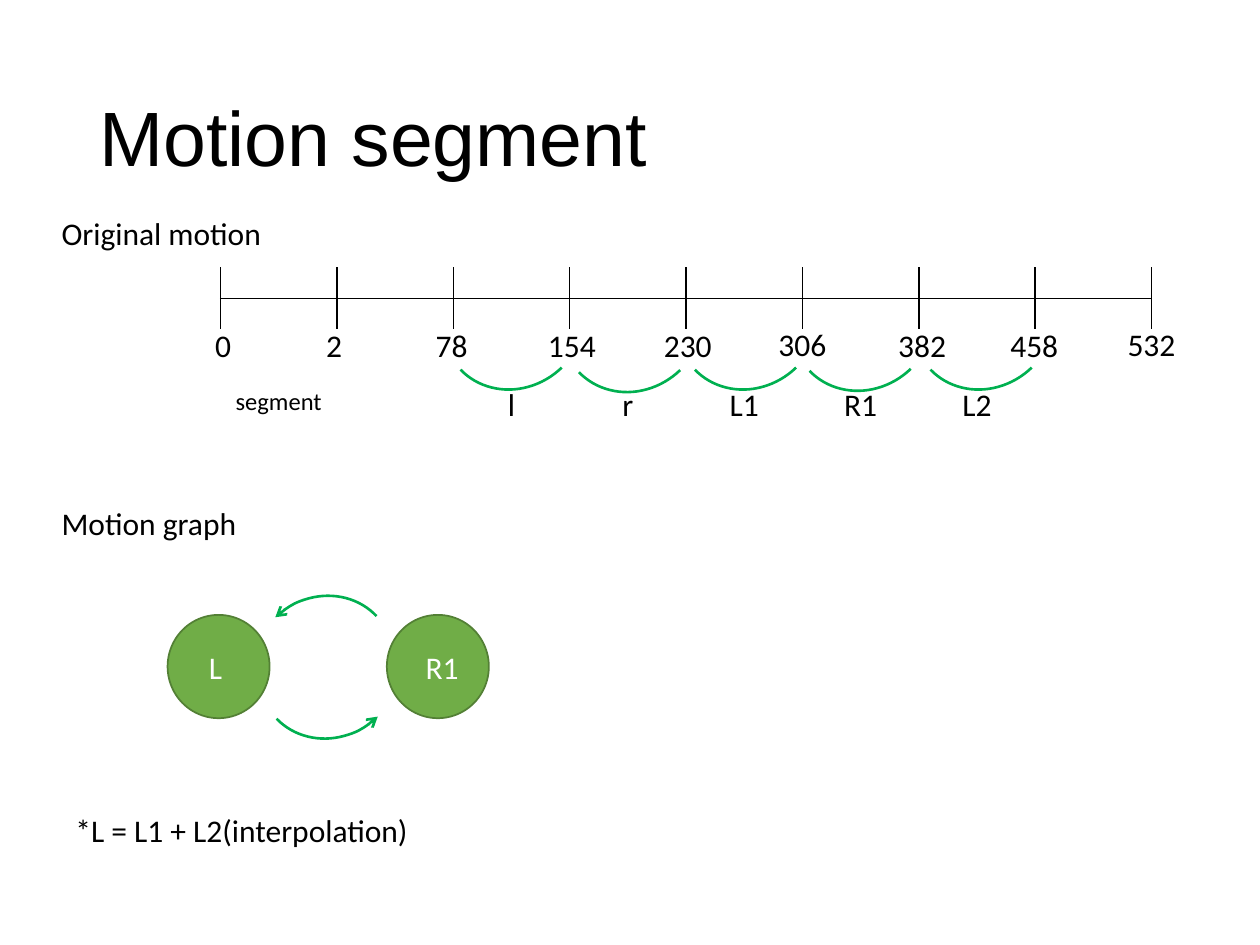
from dataclasses import dataclass

from lxml.etree import SubElement
from pptx import Presentation
from pptx.dml.color import RGBColor
from pptx.enum.shapes import MSO_SHAPE as Preset
from pptx.enum.text import MSO_ANCHOR as Anchor, MSO_AUTO_SIZE as AutoSize, PP_ALIGN as Align
from pptx.oxml import parse_xml
from pptx.oxml.ns import nsdecls, qn
from pptx.util import Inches, Pt


@dataclass(frozen=True)
class Theme:
    ink: str = "000000"
    white: str = "FFFFFF"
    arc: str = "00B050"
    node: str = "70AD47"
    node_line: str = "538035"
    heading_font: str = "Arial"
    body_font: str = "Calibri"
    title: float = 44
    body: float = 18
    small: float = 14
    arc_line: float = 1.5
    thin_line: float = 1


THEME = Theme()

# Content
TITLE = "Motion segment"
NOTES = [("Original motion", 0.39, 1.65, 1.84),
         ("Motion graph", 0.39, 3.95, 1.84),
         ("*L = L1 + L2(interpolation)", 0.5, 6.39, 3.38)]
SEGMENTS = ["segment", "", "l", "r", "L1", "R1", "L2", ""]
# Frame number, left, top, width
FRAMES = [("0", 1.61, 2.54, 0.51), ("2", 2.49, 2.54, 0.38), ("78", 3.36, 2.54, 0.51),
          ("154", 4.25, 2.54, 0.62), ("230", 5.17, 2.54, 0.59), ("306", 6.08, 2.53, 0.61),
          ("382", 7.03, 2.54, 0.61), ("458", 7.92, 2.54, 0.65), ("532", 8.85, 2.53, 0.58)]
SEGMENT_ARCS = [(3.49, 1.98), (4.43, 2.0), (5.35, 1.98), (6.26, 1.99), (7.22, 1.98)]
# Node label, circle left, label left, label width
NODES = [("L", 1.33, 1.56, 0.37), ("R1", 3.07, 3.28, 0.53)]
# Arc left, rotation
TRANSITIONS = [(2.03, 136.1), (1.97, 316.6)]

# Geometry
TIMELINE = (1.75, 2.12, 7.39, 1.31)
ROW_HEIGHTS = [0.25, 0.24, 0.41, 0.41]
ARC_SIZE = (1.18, 1.09)
ARC_ROTATION = 136.1
LABEL_HEIGHT = 0.4
NODE_TOP, NODE_SIZE = 4.88, (0.81, 0.82)
NODE_LABEL_TOP, TRANSITION_TOP = 5.09, 4.75


def color(value):
    return RGBColor.from_string(value)


def inches(*lengths):
    return [Inches(length) for length in lengths]


def add_run(paragraph, text, size, ink=THEME.ink, font=THEME.body_font):
    run = paragraph.add_run()
    run.text = text
    run.font.name = font
    run.font.size = Pt(size)
    run.font.color.rgb = color(ink)


def add_label(shapes, text, left, top, width, ink=THEME.ink):
    frame = shapes.add_textbox(*inches(left, top, width, LABEL_HEIGHT)).text_frame
    frame.word_wrap = True
    frame.auto_size = AutoSize.SHAPE_TO_FIT_TEXT
    add_run(frame.paragraphs[0], text, THEME.body, ink)


def add_arc(shapes, left, top, rotation=ARC_ROTATION, arrow=False):
    arc = shapes.add_shape(Preset.ARC, *inches(left, top, *ARC_SIZE))
    arc.rotation = rotation
    arc.shadow.inherit = False
    arc.fill.background()
    arc.line.color.rgb = color(THEME.arc)
    arc.line.width = Pt(THEME.arc_line)
    if arrow:
        SubElement(arc.line._get_or_add_ln(), qn("a:headEnd"), type="arrow")


def set_borders(cell, visible):
    """Draw the named sides (L, R, T, B) and hide the others."""
    properties = cell._tc.get_or_add_tcPr()
    for index, side in enumerate("LRTB"):
        paint = "<a:noFill/>"
        if side in visible:
            paint = f'<a:solidFill><a:srgbClr val="{THEME.ink}"/></a:solidFill>'
        properties.insert(index, parse_xml(
            f'<a:ln{side} {nsdecls("a")} w="{Pt(THEME.thin_line)}">{paint}</a:ln{side}>'))


def add_timeline(shapes):
    table = shapes.add_table(len(ROW_HEIGHTS), len(SEGMENTS), *inches(*TIMELINE)).table
    table.first_row = table.horz_banding = False
    for column in table.columns:
        column.width = Inches(TIMELINE[2] / len(SEGMENTS))
    borders = ["LRB", "LRT", "", ""]
    for row_index, (row, height) in enumerate(zip(table.rows, ROW_HEIGHTS)):
        row.height = Inches(height)
        for cell, text in zip(row.cells, SEGMENTS):
            cell.fill.background()
            set_borders(cell, borders[row_index])
            paragraph = cell.text_frame.paragraphs[0]
            if row_index == len(ROW_HEIGHTS) - 1 and text:
                paragraph.alignment = Align.CENTER
                add_run(paragraph, text, THEME.small if text == "segment" else THEME.body)
            else:
                # Small empty text keeps the tick rows low
                cell.margin_top = cell.margin_bottom = 0
                SubElement(paragraph._p, qn("a:endParaRPr"), sz="800")


def add_graph(shapes):
    group = shapes.add_group_shape().shapes
    for text, left, label_left, label_width in NODES:
        node = group.add_shape(Preset.OVAL, *inches(left, NODE_TOP, *NODE_SIZE))
        node.shadow.inherit = False
        node.fill.solid()
        node.fill.fore_color.rgb = color(THEME.node)
        node.line.color.rgb = color(THEME.node_line)
        node.line.width = Pt(THEME.thin_line)
        add_label(group, text, label_left, NODE_LABEL_TOP, label_width, THEME.white)
    for left, rotation in TRANSITIONS:
        add_arc(group, left, TRANSITION_TOP, rotation, arrow=True)


def main():
    presentation = Presentation()
    presentation.slide_width, presentation.slide_height = inches(10, 7.5)
    shapes = presentation.slides.add_slide(presentation.slide_layouts[6]).shapes

    # Title
    frame = shapes.add_textbox(*inches(0.69, 0.4, 8.62, 1.45)).text_frame
    frame.word_wrap = True
    frame.vertical_anchor = Anchor.MIDDLE
    frame.paragraphs[0].line_spacing = 0.9
    add_run(frame.paragraphs[0], TITLE, THEME.title, font=THEME.heading_font)

    # Timeline with frame numbers and segment arcs
    add_timeline(shapes)
    for frame_label in FRAMES:
        add_label(shapes, *frame_label)
    for left, top in SEGMENT_ARCS:
        add_arc(shapes, left, top)

    # Motion graph and notes
    add_graph(shapes)
    for note in NOTES:
        add_label(shapes, *note)

    presentation.save("out.pptx")


if __name__ == "__main__":
    main()
